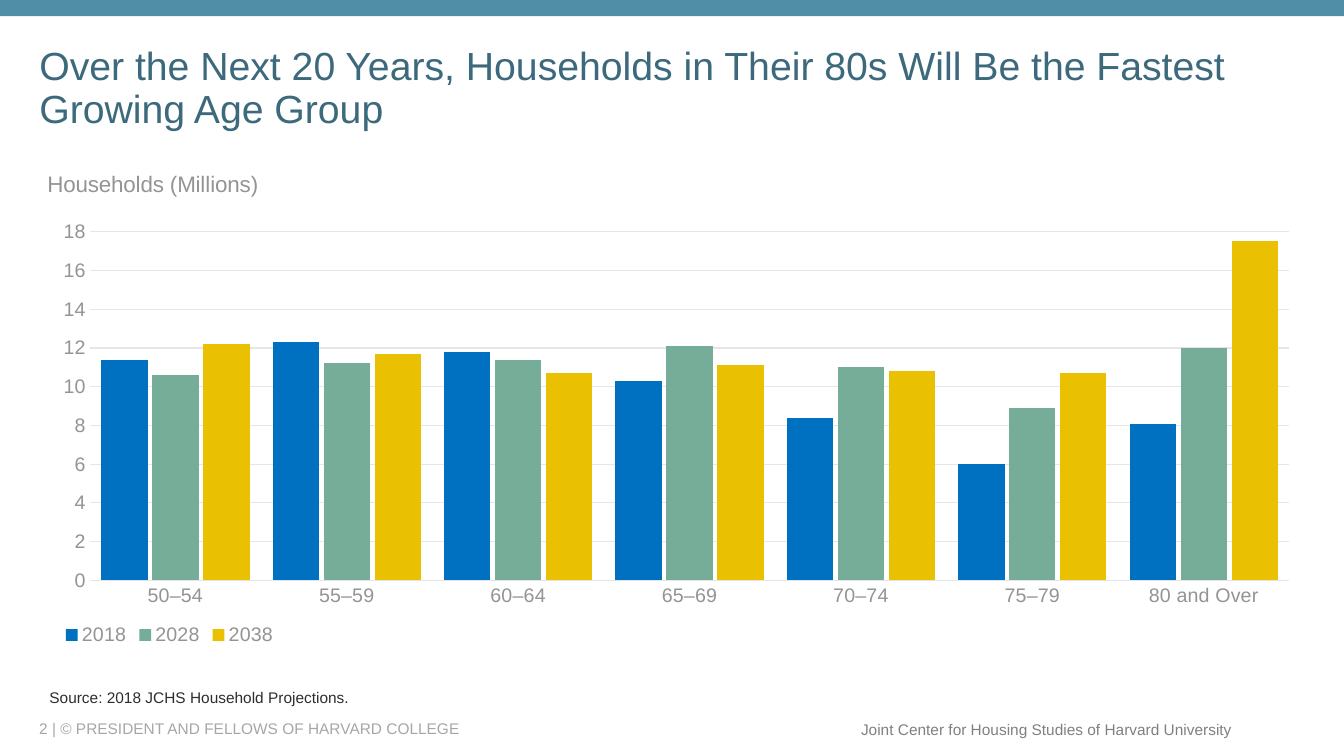
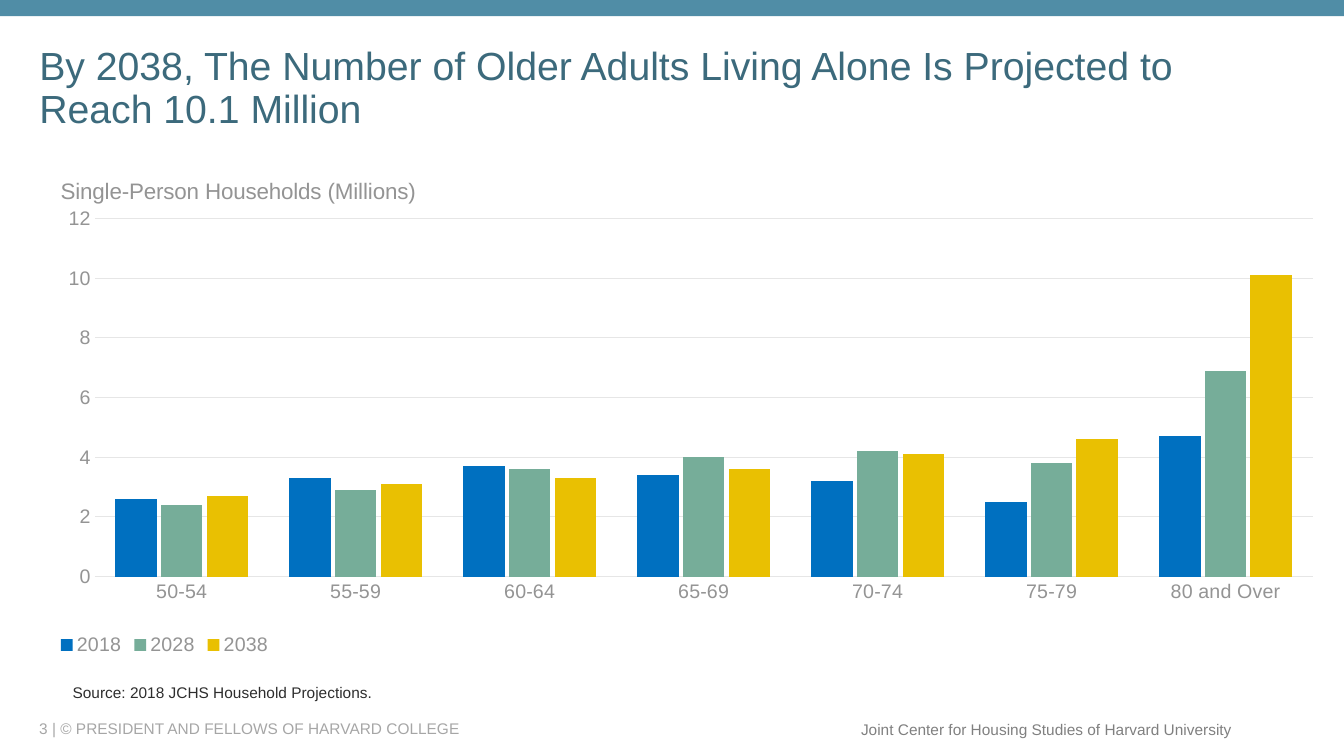
from pptx import Presentation
from pptx.chart.data import CategoryChartData
from pptx.dml.color import RGBColor
from pptx.enum.chart import XL_CHART_TYPE, XL_LEGEND_POSITION, XL_TICK_MARK
from pptx.enum.shapes import MSO_SHAPE
from pptx.enum.text import MSO_ANCHOR, MSO_AUTO_SIZE, PP_ALIGN
from pptx.oxml import parse_xml
from pptx.oxml.ns import nsdecls
from pptx.util import Inches, Pt

BAND = RGBColor(0x50, 0x8D, 0xA6)
TITLE = RGBColor(0x3C, 0x6A, 0x7C)
INK = RGBColor(0x2D, 0x2D, 0x2D)
LABEL = RGBColor(0x94, 0x94, 0x94)
GRID = RGBColor(0xE6, 0xE6, 0xE6)
FOOTER = RGBColor(0xA6, 0xA6, 0xA6)
CENTER = RGBColor(0x80, 0x80, 0x80)
SERIES_COLORS = (
    RGBColor(0x00, 0x70, 0xC0),
    RGBColor(0x76, 0xAD, 0x99),
    RGBColor(0xE9, 0xC0, 0x02),
)
COLUMNS = XL_CHART_TYPE.COLUMN_CLUSTERED
BOTTOM_LEGEND = XL_LEGEND_POSITION.BOTTOM
NO_TICK = XL_TICK_MARK.NONE
RECT = MSO_SHAPE.RECTANGLE
MIDDLE, BOTTOM = MSO_ANCHOR.MIDDLE, MSO_ANCHOR.BOTTOM
LEFT, RIGHT = PP_ALIGN.LEFT, PP_ALIGN.RIGHT
NO_FIT = MSO_AUTO_SIZE.NONE
FONT = "Arial"
YEARS = ("2018", "2028", "2038")


class Deck:
    """Hold the shared style and the slide being built."""

    def __init__(self):
        self.prs = Presentation()
        self.prs.slide_width, self.prs.slide_height = Inches(13.33), Inches(7.5)
        self.s = None

    def font(self, font, size, color):
        font.name, font.size, font.bold = FONT, Pt(size), False
        font.color.rgb = color

    def place(self, sp, box):
        sp.left, sp.top, sp.width, sp.height = map(Inches, box)

    def set_text(self, sp, text, size, color, anchor=MIDDLE, align=LEFT, wrap=True):
        tf = sp.text_frame
        tf.text = text
        tf.word_wrap, tf.auto_size, tf.vertical_anchor = wrap, NO_FIT, anchor
        p = tf.paragraphs[0]
        p.alignment = align
        self.font(p.runs[0].font, size, color)
        return p

    def label(self, box, *args, **kwargs):
        sp = self.s.shapes.add_textbox(*map(Inches, box))
        self.set_text(sp, *args, **kwargs)

    def band(self):
        sp = self.s.shapes.add_shape(RECT, 0, 0, self.prs.slide_width, Inches(0.16))
        sp.shadow.inherit = False
        sp.fill.solid()
        sp.fill.fore_color.rgb = BAND
        sp.line.fill.background()

    def slide(self, number, title):
        self.s = self.prs.slides.add_slide(self.prs.slide_layouts[1])
        self.label((0.29, 7.13, 7.92, 0.2),
                   f"{number} | © PRESIDENT AND FELLOWS OF HARVARD COLLEGE", 11, FOOTER)
        self.label((8.42, 7.09, 3.9, 0.29),
                   "Joint Center for Housing Studies of Harvard University",
                   11, CENTER, align=RIGHT, wrap=False)
        self.band()
        sp = self.s.shapes.title
        self.place(sp, (0.29, 0.4, 12.65, 0.97))
        self.set_text(sp, title, 28, TITLE).line_spacing = 0.9

    def source(self, left, top):
        sp = self.s.placeholders[1]
        self.place(sp, (left, top, 11.75, 0.58))
        p = self.set_text(sp, "Source: 2018 JCHS Household Projections.",
                          11, INK, BOTTOM)
        p.space_before = Pt(0)
        pPr = p._p.get_or_add_pPr()
        pPr.set("marL", "0")
        pPr.set("indent", "0")
        pPr.append(parse_xml(f"<a:buNone {nsdecls('a')}/>"))

    def arrange(self, parent, index, size, box, target=""):
        """Place a chart part at a box given in inches from the chart corner."""
        for old in parent.xpath("c:layout"):
            parent.remove(old)
        names = ("x", "y", "w", "h")[:len(box)]
        modes = "".join(f'<c:{n}Mode val="edge"/>' for n in "xy")
        values = "".join(f'<c:{n} val="{v / size[i % 2]:.4f}"/>'
                         for i, (n, v) in enumerate(zip(names, box)))
        parent.insert(index, parse_xml(
            f"<c:layout {nsdecls('c')}><c:manualLayout>{target}{modes}{values}"
            "</c:manualLayout></c:layout>"))

    def axis(self, axis):
        axis.major_tick_mark = axis.minor_tick_mark = NO_TICK
        self.font(axis.tick_labels.font, 14, LABEL)

    def rule(self, line):
        line.color.rgb, line.width = GRID, Pt(0.75)

    def chart(self, box, title, cats, rows, top, gap, fmt, plot_box, legend_box):
        data = CategoryChartData(number_format=fmt)
        data.categories = cats
        for year, values in zip(YEARS, rows):
            data.add_series(year, values)
        chart = self.s.shapes.add_chart(COLUMNS, *map(Inches, box), data).chart
        self.font(chart.font, 10, LABEL)

        plot = chart.plots[0]
        plot.gap_width, plot.overlap, plot.vary_by_categories = gap, -10, False
        for series, color in zip(plot.series, SERIES_COLORS):
            series.format.fill.solid()
            series.format.fill.fore_color.rgb = color

        cat, val = chart.category_axis, chart.value_axis
        self.axis(cat)
        self.rule(cat.format.line)
        self.axis(val)
        val.format.line.fill.background()
        val.minimum_scale, val.maximum_scale, val.major_unit = 0, top, 2
        val.tick_labels.number_format = fmt
        val.tick_labels.number_format_is_linked = False
        self.rule(val.major_gridlines.format.line)

        chart.has_title = chart.has_legend = True
        tf = chart.chart_title.text_frame
        tf.text = title
        self.font(tf.paragraphs[0].runs[0].font, 16, LABEL)
        legend = chart.legend
        legend.position, legend.include_in_layout = BOTTOM_LEGEND, False
        self.font(legend.font, 14, LABEL)

        size = box[2:]
        root = chart.element
        self.arrange(root.xpath("c:chart/c:title")[0], 1, size, (0.04, 0.04))
        self.arrange(root.xpath("c:chart/c:legend")[0], 1, size, legend_box)
        self.arrange(root.xpath("c:chart/c:plotArea")[0], 0, size, plot_box,
                     '<c:layoutTarget val="inner"/>')


def ages(dash):
    return [f"{a}{dash}{a + 4}" for a in range(50, 80, 5)] + ["80 and Over"]


def main():
    deck = Deck()

    deck.slide(2, "Over the Next 20 Years, Households in Their 80s Will Be "
                  "the Fastest Growing Age Group")
    deck.chart((0.39, 1.6, 12.65, 4.89), "Households (Millions)", ages("–"),
               ((11.4, 12.3, 11.8, 10.3, 8.4, 6, 8.1),
                (10.6, 11.2, 11.4, 12.1, 11, 8.9, 12),
                (12.2, 11.7, 10.7, 11.1, 10.8, 10.7, 17.5)),
               top=18, gap=50, fmt="0",
               plot_box=(0.5, 0.7, 11.9, 3.46), legend_box=(0.2, 4.55))
    deck.source(0.39, 6.48)

    deck.slide(3, "By 2038, The Number of Older Adults Living Alone Is "
                  "Projected to Reach 10.1 Million")
    deck.chart((0.52, 1.67, 12.65, 5.03), "Single-Person Households (Millions)",
               ages("-"),
               ((2.6, 3.3, 3.7, 3.4, 3.2, 2.5, 4.7),
                (2.4, 2.9, 3.6, 4, 4.2, 3.8, 6.9),
                (2.7, 3.1, 3.3, 3.6, 4.1, 4.6, 10.1)),
               top=12, gap=100, fmt="#,##0",
               plot_box=(0.42, 0.5, 12.08, 3.55), legend_box=(0.02, 4.58))
    deck.source(0.62, 6.43)

    deck.prs.save("out.pptx")


if __name__ == "__main__":
    main()
